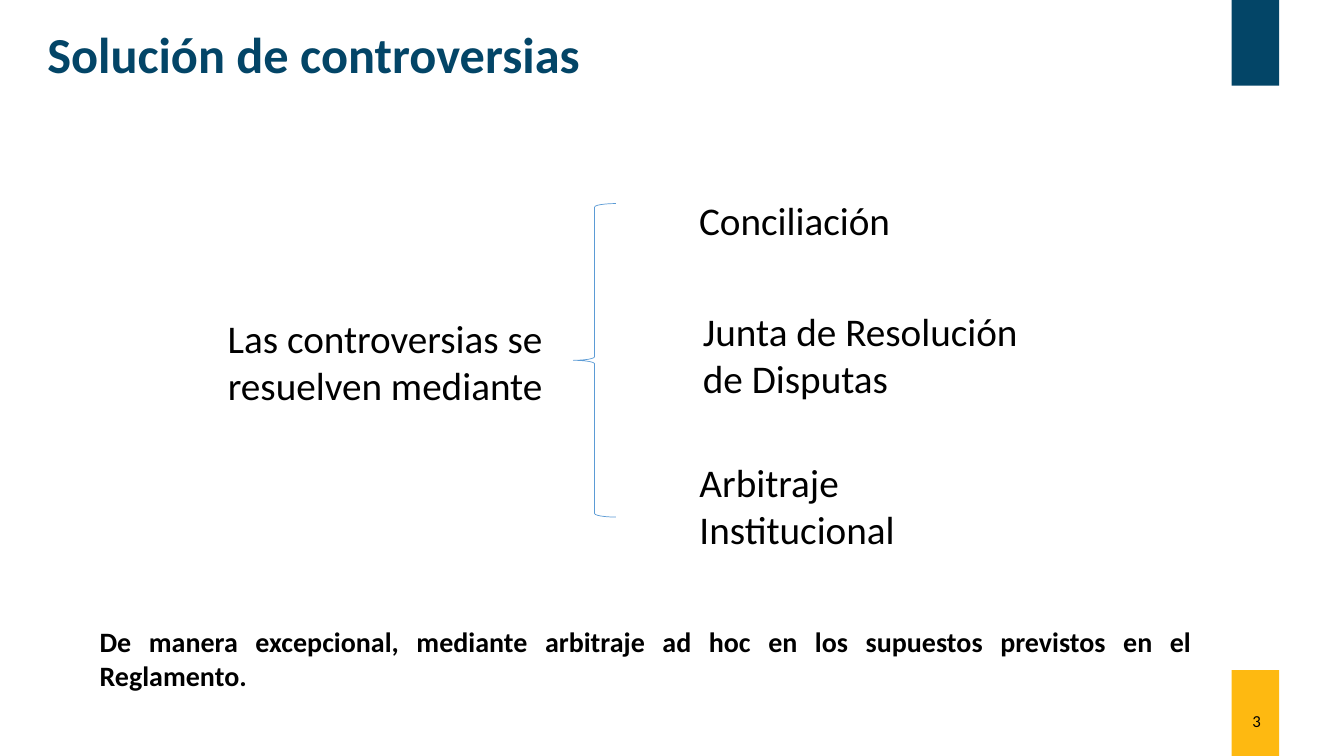
from pptx import Presentation
from pptx import util as u
from pptx.dml.color import RGBColor
from pptx.enum import shapes, text

COLORS = {
    "navy": "034567",
    "amber": "FEB911",
    "blue": "5B9BD5",
    "black": "000000",
    "white": "FFFFFF",
}
KINDS = shapes.MSO_SHAPE
ALIGN = text.PP_ALIGN
ANCHOR = text.MSO_ANCHOR


def add_block(kind, box, fill=None):
    """Add a preset shape without shadow or outline; box is in centimetres."""
    block = slide.shapes.add_shape(kind, *map(u.Cm, box))
    block.shadow.inherit = False
    block.line.fill.background()
    if fill:
        block.fill.solid()
        block.fill.fore_color.rgb = RGBColor.from_string(COLORS[fill])
    else:
        block.fill.background()
    return block


def write(holder, words, size, align=ALIGN.LEFT, anchor=ANCHOR.MIDDLE,
          color="black", bold=False):
    frame = holder.text_frame
    frame.word_wrap = True
    frame.auto_size = text.MSO_AUTO_SIZE.NONE
    frame.vertical_anchor = anchor
    paragraph = frame.paragraphs[0]
    paragraph.alignment = align
    run = paragraph.add_run()
    run.text = words
    run.font.name = "Calibri"
    run.font.size = u.Pt(size)
    run.font.bold = bold
    run.font.color.rgb = RGBColor.from_string(COLORS[color])


prs = Presentation()
prs.slide_width, prs.slide_height = u.Cm(33.87), u.Cm(19.05)
slide = prs.slides.add_slide(prs.slide_layouts[5])

# Heading
title = slide.shapes.title
title.left, title.top, title.width, title.height = map(u.Cm, (0.94, 0.46, 29.06, 1.8))
write(title, "Solución de controversias", 36, anchor=ANCHOR.TOP, color="navy", bold=True)

# Statement and the means it leads to
statement = add_block(KINDS.RECTANGLE, (1.52, 7.82, 12.4, 2.59), "white")
write(statement, "Las controversias se resuelven mediante", 28, ALIGN.RIGHT)

means = [
    ("Conciliación", (15.7, 3.84, 11.4, 3.4)),
    ("Junta de Resolución de Disputas", (15.67, 7.21, 12.27, 3.43)),
    ("Arbitraje Institucional", (15.72, 11.02, 11.33, 3.45)),
]
for label, box in means:
    write(add_block(KINDS.OVAL, box, "white"), label, 28)

brace = add_block(KINDS.LEFT_BRACE, (14.45, 5.13, 1.07, 7.9))
brace.line.color.rgb = RGBColor.from_string(COLORS["blue"])
brace.line.width = u.Pt(0.5)

# Exception note
note = slide.shapes.add_textbox(*map(u.Cm, (2.26, 15.62, 28.02, 1.96)))
write(note, "De manera excepcional, mediante arbitraje ad hoc en los supuestos "
      "previstos en el Reglamento.", 20, ALIGN.JUSTIFY, ANCHOR.TOP, bold=True)

# Edge bars and page number
for top, color in [(16.89, "amber"), (0, "navy")]:
    add_block(KINDS.RECTANGLE, (31.04, top, 1.2, 2.16), color)

page_number = slide.shapes.add_textbox(*map(u.Cm, (24.13, 17.65, 7.9, 1.02)))
write(page_number, "3", 12, ALIGN.RIGHT)

prs.save("out.pptx")
